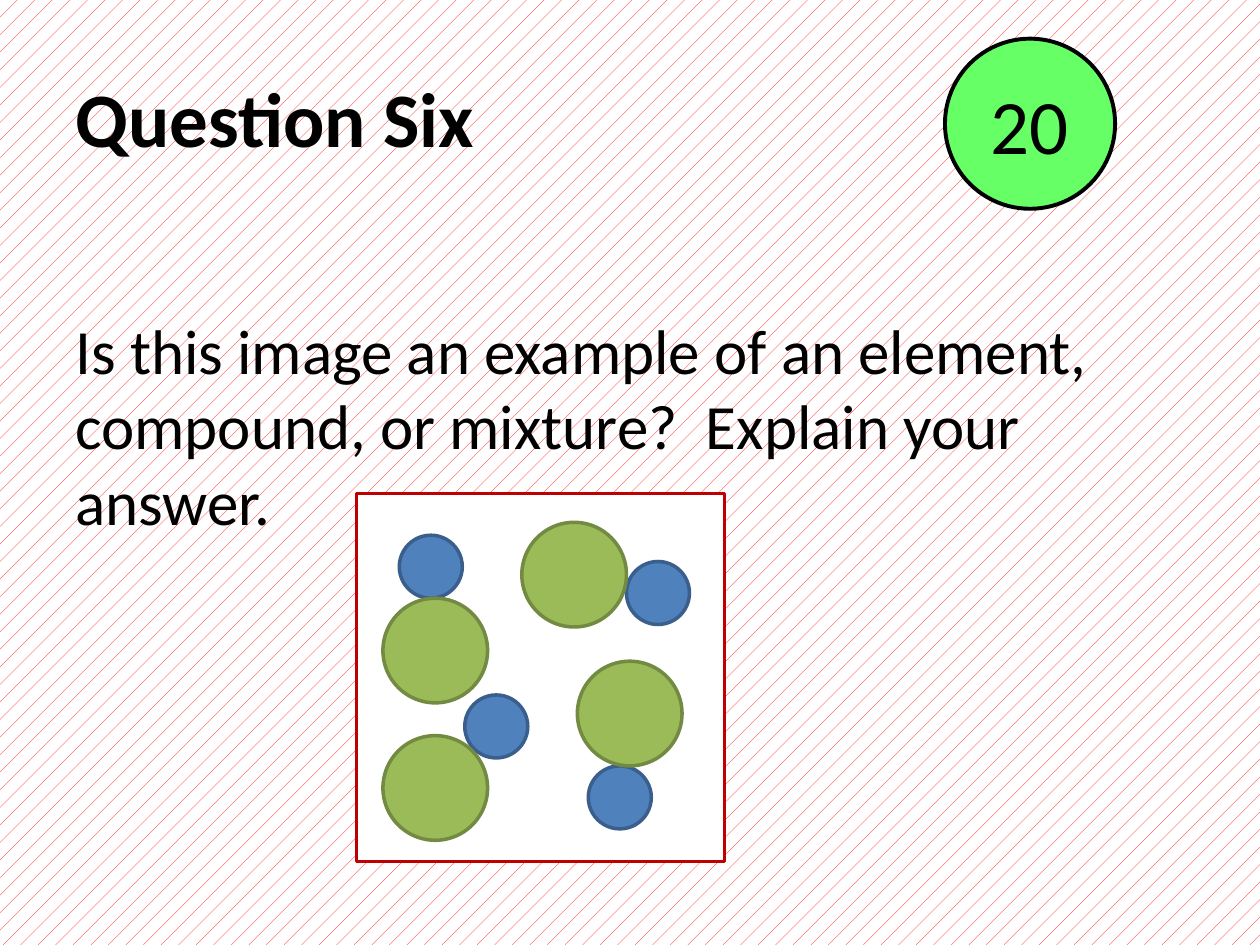
from pptx import Presentation
from pptx.dml.color import RGBColor
from pptx.enum.dml import MSO_PATTERN as Pat
from pptx.enum.shapes import MSO_SHAPE as Kind
from pptx.enum.text import MSO_ANCHOR as Anchor, PP_ALIGN as Align
from pptx.util import Cm, Pt

BLUE = ("4F81BD", "3A5F8C")
GREEN = ("9BBB59", "738A42")
SMALL, LARGE = 1.27, 2.11

# Corners of the small and the large atom of each molecule, from the frame, cm
PAIRS = [
    ((0.86, 0.84), (0.53, 2.11)),
    ((5.44, 1.37), (3.33, 0.58)),
    ((4.67, 5.49), (4.45, 3.38)),
    ((2.18, 4.06), (0.53, 4.88)),
]


def hue(code):
    return RGBColor.from_string(code)


def write(frame, words, look, form):
    """Put one paragraph in a text frame."""
    for name, value in look.items():
        setattr(frame, name, value)
    para = frame.paragraphs[0]
    for name, value in form.items():
        setattr(para, name, value)
    run = para.add_run()
    run.text = words
    return run.font


def style(font, **form):
    for name, value in {"name": "Calibri", **form}.items():
        setattr(font, name, value)
    font.color.rgb = hue("000000")


def shape(slide, kind, box, fill, line, width=2):
    item = slide.shapes.add_shape(kind, *map(Cm, box))
    item.shadow.inherit = False
    item.fill.solid()
    item.fill.fore_color.rgb = hue(fill)
    item.line.color.rgb = hue(line)
    item.line.width = Pt(width)
    return item


def ground(slide):
    fill = slide.background.fill
    fill.patterned()
    fill.pattern = Pat.PERCENT_5
    fill.fore_color.rgb = hue("FF0000")
    fill.back_color.rgb = hue("FFFFFF")


def title(slide, box, words):
    frame = slide.shapes.add_textbox(*map(Cm, box)).text_frame
    look = {"word_wrap": True, "vertical_anchor": Anchor.MIDDLE}
    style(write(frame, words, look, {}), size=Pt(44), bold=True)


def body(slide, box, words):
    frame = slide.shapes.add_textbox(*map(Cm, box)).text_frame
    look = {"word_wrap": True, "vertical_anchor": Anchor.TOP}
    font = write(frame, words, look, {"space_before": Pt(7.2)})
    style(font, size=Pt(36))


def badge(slide, box, words):
    disc = shape(slide, Kind.OVAL, box, "66FF66", "000000", 2.25)
    look = {"word_wrap": False, "vertical_anchor": Anchor.MIDDLE}
    font = write(disc.text_frame, words, look, {"alignment": Align.CENTER})
    style(font, size=Pt(44))


def model(slide, box):
    """Draw the framed molecules."""
    shape(slide, Kind.RECTANGLE, box, "FFFFFF", "C00000")
    left, top = box[:2]
    for pair in PAIRS:
        for (x, y), size, tint in zip(pair, (SMALL, LARGE), (BLUE, GREEN)):
            shape(slide, Kind.OVAL, (left + x, top + y, size, size), *tint)


def main():
    deck = Presentation()
    deck.slide_width, deck.slide_height = Cm(25.4), Cm(19.05)
    slide = deck.slides.add_slide(deck.slide_layouts[6])

    ground(slide)
    # Heading and question
    title(slide, (1.27, 0.76, 22.86, 3.18), "Question Six")
    body(slide, (1.27, 6.15, 22.86, 10.87),
         "Is this image an example of an element, compound, or mixture?  "
         "Explain your answer.")
    # Points and molecules
    badge(slide, (19.05, 0.78, 3.43, 3.43), "20")
    model(slide, (7.19, 9.95, 7.42, 7.42))

    deck.save("out.pptx")


if __name__ == "__main__":
    main()
